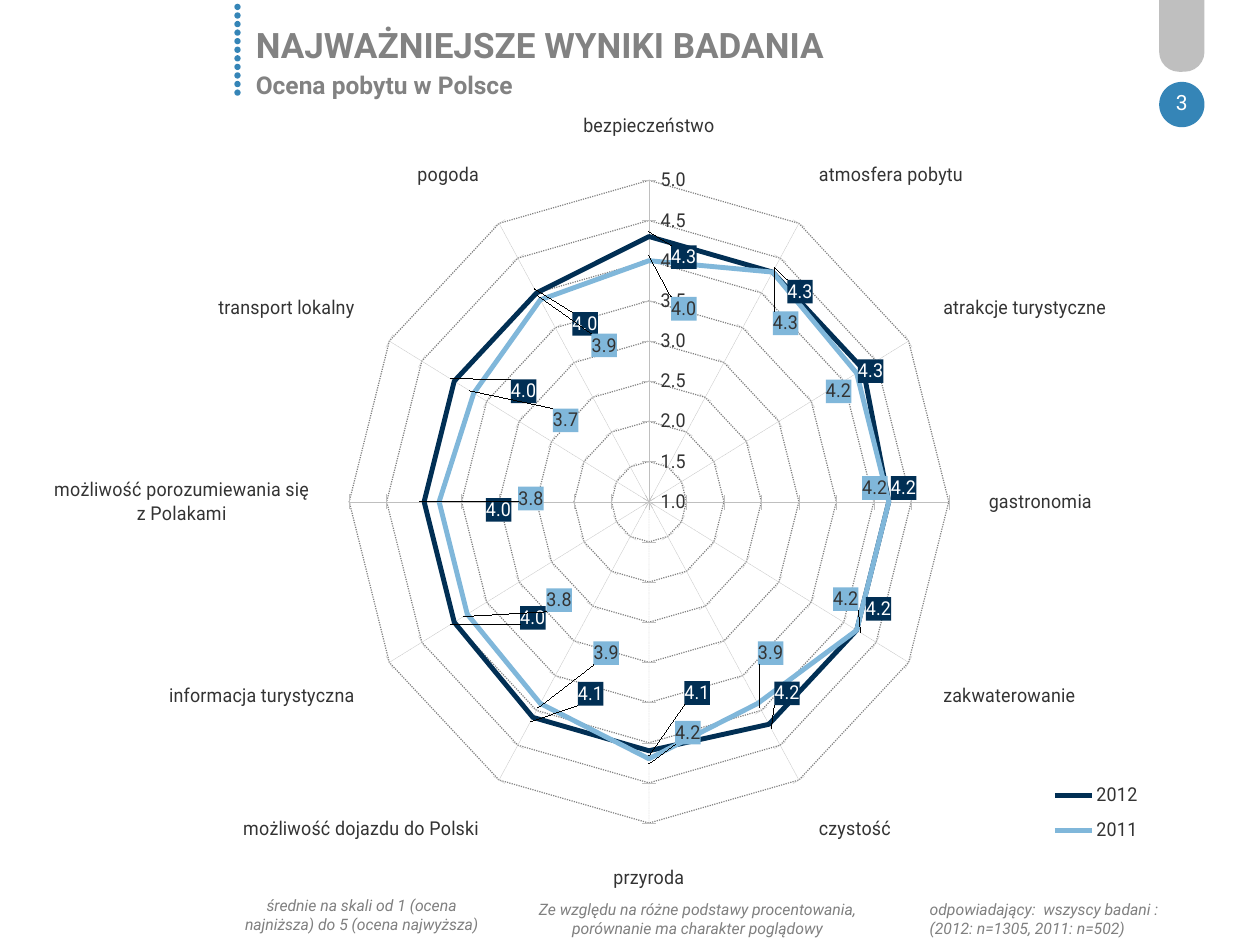
import copy
import math

import pptx
import pptx.chart.data
import pptx.dml.color
import pptx.enum.chart
import pptx.enum.dml
import pptx.enum.shapes
import pptx.enum.text
import pptx.oxml
import pptx.oxml.ns
import pptx.util

Inches, Pt = pptx.util.Inches, pptx.util.Pt
RGB = pptx.dml.color.RGBColor.from_string
SHAPE = pptx.enum.shapes.MSO_SHAPE
ALIGN = pptx.enum.text.PP_ALIGN
ANCHOR = pptx.enum.text.MSO_ANCHOR
DASH = pptx.enum.dml.MSO_LINE
qn = pptx.oxml.ns.qn

THEME = {
    "font": "Roboto", "accent": "3585B7", "tab": "BFBFBF", "heading": "828282",
    "note": "808080", "body": "333333", "white": "FFFFFF", "spoke": "D9D9D9",
    "title_pt": 20, "subtitle_pt": 14, "page_pt": 12, "chart_pt": 11, "note_pt": 9,
}

HEADING = {"size": THEME["title_pt"], "color": THEME["heading"], "bold": True}
NOTE = {"size": THEME["note_pt"], "color": THEME["note"], "italic": True}
PAGE = {"size": THEME["page_pt"], "color": THEME["white"]}

# text, box, run format, alignment, anchor, inset
TEXTS = [
    ("3", (9.08, 0.61, 0.6, 0.4), PAGE, ALIGN.CENTER, ANCHOR.MIDDLE, 0.1),
    ("NAJWAŻNIEJSZE WYNIKI BADANIA", (2.03, 0, 7.15, 0.52), HEADING,
     ALIGN.LEFT, ANCHOR.BOTTOM, 0),
    ("Ocena pobytu w Polsce", (2.03, 0.27, 7.15, 0.52),
     {**HEADING, "size": THEME["subtitle_pt"]}, ALIGN.LEFT, ANCHOR.BOTTOM, 0),
    ("Ze względu na różne podstawy procentowania,\vporównanie ma charakter poglądowy",
     (4.02, 7.09, 3.03, 0.4), NOTE, ALIGN.CENTER, ANCHOR.TOP, 0.1),
    ("odpowiadający:  wszyscy badani :\v(2012: n=1305, 2011: n=502)",
     (7.28, 7.09, 2.05, 0.4), NOTE, ALIGN.LEFT, ANCHOR.TOP, 0.1),
    ("średnie na skali od 1 (ocena najniższa) do 5 (ocena najwyższa)",
     (1.77, 7.06, 2.2, 0.4), NOTE, ALIGN.CENTER, ANCHOR.TOP, 0.1),
]

CATEGORIES = [
    "bezpieczeństwo", "atmosfera pobytu", "atrakcje turystyczne", "gastronomia",
    "zakwaterowanie", "czystość", "przyroda", "możliwość dojazdu do Polski",
    "informacja turystyczna", "możliwość porozumiewania się\nz Polakami",
    "transport lokalny", "pogoda",
]
# "labels" holds the centre of each value label on the slide, in inches
SERIES = [
    {"name": "2012", "color": "012F54", "text": THEME["white"], "format": "#,##0.0",
     "values": [4.3, 4.3, 4.3, 4.2, 4.2, 4.2, 4.1, 4.1, 4, 4, 4, 4],
     "labels": [(5.14, 2.13), (6.1, 2.36), (6.69, 2.98), (6.93, 3.89),
                (6.76, 4.83), (5.99, 5.49), (5.25, 5.44), (4.37, 5.49),
                (3.89, 4.9), (3.64, 4.06), (3.81, 3.14), (4.32, 2.62)]},
    {"name": "2011", "color": "80B7DA", "text": THEME["body"], "format": "0.0",
     "values": [4, 4.3, 4.2, 4.2, 4.2, 3.9, 4.2, 3.9, 3.8, 3.8, 3.7, 3.9],
     "labels": [(5.14, 2.54), (5.98, 2.61), (6.42, 3.14), (6.68, 3.89),
                (6.48, 4.75), (5.85, 5.17), (5.17, 5.76), (4.5, 5.17),
                (4.12, 4.76), (3.92, 3.97), (4.17, 3.37), (4.49, 2.79)]},
]
CHART = (0.43, 0.6, 8.76, 6.46)
PLOT = (0.211, 0.129, 0.585, 0.794)
LEGEND = (0.89, 0.86, 0.1, 0.1)
LABEL_HALF = (0.1, 0.09)
SCALE = (1, 5)


def set_font(font, size, color, **flags):
    font.name, font.size = THEME["font"], Pt(size)
    font.color.rgb = RGB(color)
    for name, value in flags.items():
        setattr(font, name, value)


def add_shape(slide, kind, box, color):
    sp = slide.shapes.add_shape(kind, *map(Inches, box))
    sp.shadow.inherit = False
    sp.fill.solid()
    sp.fill.fore_color.rgb = RGB(color)
    sp.line.fill.background()
    return sp


def add_text(slide, text, box, style, align, anchor, inset):
    tf = slide.shapes.add_textbox(*map(Inches, box)).text_frame
    tf.word_wrap, tf.vertical_anchor = True, anchor
    tf.margin_left = tf.margin_right = Inches(inset)
    tf.margin_top = tf.margin_bottom = Inches(inset / 2)
    p = tf.paragraphs[0]
    p.text, p.alignment = text, align
    for r in p.runs:
        set_font(r.font, **style)


def xml(body):
    head, tail = body.split(">", 1) if not body.split(">", 1)[0].endswith("/") else (body[:-2], "")
    end = ">" + tail if tail else "/>"
    return pptx.oxml.parse_xml(head + " " + pptx.oxml.ns.nsdecls("c", "a") + end)


def manual_layout(box, inner=False):
    target = '<c:layoutTarget val="inner"/>' if inner else ""
    modes = '<c:xMode val="edge"/><c:yMode val="edge"/>' if len(box) == 4 else ""
    parts = "".join(f'<c:{k} val="{v:.3f}"/>' for k, v in zip("xywh", box))
    return xml(f"<c:layout><c:manualLayout>{target}{modes}{parts}</c:manualLayout></c:layout>")


def label_offset(index, value, centre):
    """Shift from the place just outside the data point, as a share of the chart."""
    angle = 2 * math.pi * index / len(CATEGORIES)
    ratio = (value - SCALE[0]) / (SCALE[1] - SCALE[0])
    shift = []
    for axis, unit in enumerate((math.sin(angle), -math.cos(angle))):
        size = CHART[axis + 2]
        middle = CHART[axis] + size * (PLOT[axis] + PLOT[axis + 2] / 2)
        point = middle + unit * ratio * size * PLOT[axis + 2] / 2
        side = 0 if abs(unit) < 0.01 else math.copysign(1, unit)
        shift.append((centre[axis] - point - side * LABEL_HALF[axis]) / size)
    return shift


def format_series(series, spec_row):
    series.smooth = False
    series.format.line.color.rgb = RGB(spec_row["color"])
    series.format.line.width = Pt(3)
    labels = series.data_labels
    labels.show_value = True
    labels.number_format, labels.number_format_is_linked = spec_row["format"], False
    set_font(labels.font, THEME["chart_pt"], spec_row["text"])
    root = labels._element
    root.find(qn("c:txPr")).addprevious(xml(
        f'<c:spPr><a:solidFill><a:srgbClr val="{spec_row["color"]}"/></a:solidFill></c:spPr>'))
    shared = [el for el in root if el.tag != qn("c:showLeaderLines")]
    for i, (value, centre) in enumerate(zip(spec_row["values"], spec_row["labels"])):
        label = xml(f'<c:dLbl><c:idx val="{i}"/></c:dLbl>')
        label.append(manual_layout(label_offset(i, value, centre)))
        label.extend(copy.deepcopy(el) for el in shared)
        root.insert(i, label)


def format_line(line, color, width, dash=DASH.SOLID):
    line.color.rgb, line.width, line.dash_style = RGB(color), Pt(width), dash


def add_radar(slide):
    data = pptx.chart.data.CategoryChartData()
    data.categories = CATEGORIES
    for row in SERIES:
        data.add_series(row["name"], row["values"])
    chart = slide.shapes.add_chart(
        pptx.enum.chart.XL_CHART_TYPE.RADAR, *map(Inches, CHART), data).chart
    set_font(chart.font, THEME["chart_pt"], THEME["body"])
    chart.has_title = False
    chart.plots[0].vary_by_categories = False

    area = chart._chartSpace.chart.plotArea
    for old in area.findall(qn("c:layout")):
        area.remove(old)
    area.insert(0, manual_layout(PLOT, inner=True))

    chart.has_legend = True
    legend = chart.legend
    legend.position = pptx.enum.chart.XL_LEGEND_POSITION.RIGHT
    legend.include_in_layout = False
    legend._element.find(qn("c:legendPos")).addnext(manual_layout(LEGEND))

    cat, val = chart.category_axis, chart.value_axis
    cat.has_major_gridlines = val.has_major_gridlines = True
    format_line(cat.major_gridlines.format.line, THEME["spoke"], 0.25)
    format_line(val.major_gridlines.format.line, THEME["note"], 0.75, DASH.ROUND_DOT)
    format_line(val.format.line, THEME["tab"], 0.25, DASH.ROUND_DOT)
    val.minimum_scale, val.maximum_scale = SCALE
    val.major_unit = 0.5
    val.major_tick_mark = pptx.enum.chart.XL_TICK_MARK.CROSS
    val.tick_labels.number_format = "#,##0.0"
    val.tick_labels.number_format_is_linked = False
    for series, row in zip(chart.plots[0].series, SERIES):
        format_series(series, row)


def main():
    prs = pptx.Presentation()
    prs.slide_width, prs.slide_height = Inches(10), Inches(7.5)
    slide = prs.slides.add_slide(prs.slide_layouts[6])
    add_shape(slide, SHAPE.OVAL, (9.2, 0.65, 0.36, 0.36), THEME["accent"])
    tab = add_shape(slide, SHAPE.ROUND_2_SAME_RECTANGLE, (9.2, 0, 0.36, 0.57), THEME["tab"])
    tab.adjustments[0], tab.adjustments[1] = 0, 0.44
    for i in range(11):
        add_shape(slide, SHAPE.OVAL, (1.86, 0.03 + 0.068 * i, 0.05, 0.05), THEME["accent"])
    add_radar(slide)
    for item in TEXTS:
        add_text(slide, *item)
    prs.save("out.pptx")


if __name__ == "__main__":
    main()
